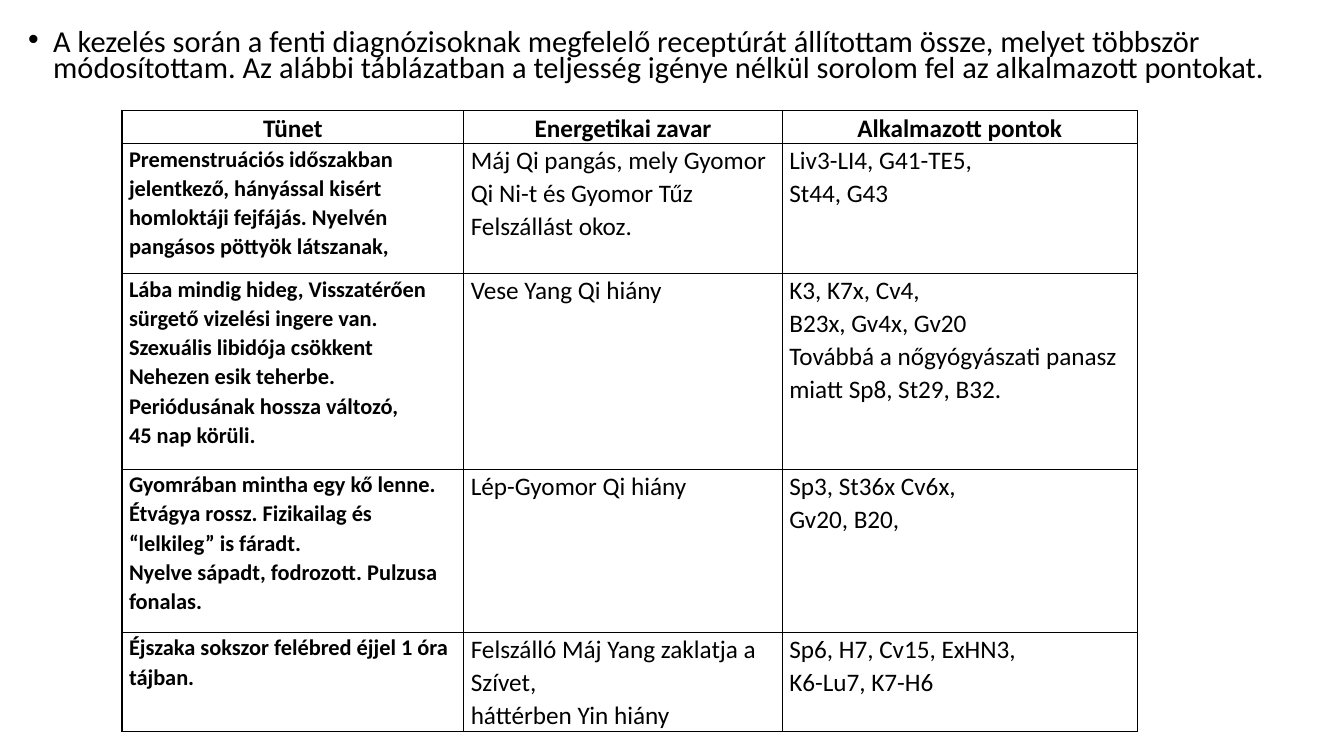
import pptx
import pptx.util
import pptx.dml.color
import pptx.enum.text
import pptx.oxml
import pptx.oxml.ns

Inch = pptx.util.Inches
Pt = pptx.util.Pt
NS = pptx.oxml.ns.nsdecls("a")
INK = "000000"


def color(code):
    return pptx.dml.color.RGBColor.from_string(code)


def style(par, size, bold, space):
    par.line_spacing = space
    for run in par.runs:
        run.font.name = "Calibri"
        run.font.size = Pt(size)
        run.font.bold = bold
        run.font.color.rgb = color(INK)


deck = pptx.Presentation()
deck.slide_width, deck.slide_height = Inch(13.33), Inch(7.5)
slide = deck.slides.add_slide(deck.slide_layouts[6])

# Table of symptoms, disorders and points
rows = [
    ("Tünet", "Energetikai zavar", "Alkalmazott pontok"),
    ("Premenstruációs időszakban jelentkező, hányással kisért homloktáji "
     "fejfájás. Nyelvén pangásos pöttyök látszanak,",
     "Máj Qi pangás, mely Gyomor Qi Ni-t és Gyomor Tűz Felszállást okoz.",
     "Liv3-LI4, G41-TE5,\nSt44, G43"),
    ("Lába mindig hideg, Visszatérően sürgető vizelési ingere van. Szexuális "
     "libidója csökkent Nehezen esik teherbe. Periódusának hossza változó,\n"
     "45 nap körüli.",
     "Vese Yang Qi hiány",
     "K3, K7x, Cv4,\nB23x, Gv4x, Gv20\n"
     "Továbbá a nőgyógyászati panasz miatt Sp8, St29, B32."),
    ("Gyomrában mintha egy kő lenne. Étvágya rossz. Fizikailag és “lelkileg” "
     "is fáradt.\nNyelve sápadt, fodrozott. Pulzusa fonalas.",
     "Lép-Gyomor Qi hiány",
     "Sp3, St36x Cv6x,\nGv20, B20,"),
    ("Éjszaka sokszor felébred éjjel 1 óra tájban.",
     "Felszálló Máj Yang zaklatja a Szívet,\nháttérben Yin hiány",
     "Sp6, H7, Cv15, ExHN3,\nK6-Lu7, K7-H6"),
]
wide = [3.39, 3.16, 3.52]
high = [0.31, 1.29, 1.94, 1.62, 0.96]

frame = slide.shapes.add_table(len(rows), len(wide), Inch(1.21), Inch(1.1),
                               Inch(sum(wide)), Inch(sum(high)))
table = frame.table
table.first_row = table.horz_banding = False
for col, size in zip(table.columns, wide):
    col.width = Inch(size)
for row, size in zip(table.rows, high):
    row.height = Inch(size)

for r, texts in enumerate(rows):
    for c, text in enumerate(texts):
        cell = table.cell(r, c)
        cell.margin_left = cell.margin_right = Inch(0.07)
        cell.margin_top = cell.margin_bottom = 0
        cell.text_frame.text = text
        for par in cell.text_frame.paragraphs:
            style(par, 16 if r and c == 0 else 18, r == 0 or c == 0, 1.07)
            if r == 0:
                par.alignment = pptx.enum.text.PP_ALIGN.CENTER
        # Borders come before the fill in the cell properties
        cell.fill.background()
        props = cell._tc.get_or_add_tcPr()
        for i, side in enumerate(("lnL", "lnR", "lnT", "lnB")):
            props.insert(i, pptx.oxml.parse_xml(
                f'<a:{side} {NS} w="{Pt(1)}"><a:solidFill>'
                f'<a:srgbClr val="{INK}"/></a:solidFill></a:{side}>'))

# Bulleted introduction
box = slide.shapes.add_textbox(Inch(0.18), Inch(0.27), Inch(12.64), Inch(0.66))
box.text_frame.word_wrap = True
box.text_frame.text = (
    "A kezelés során a fenti diagnózisoknak megfelelő receptúrát állítottam "
    "össze, melyet többször módosítottam. Az alábbi táblázatban a teljesség "
    "igénye nélkül sorolom fel az alkalmazott pontokat.")
intro = box.text_frame.paragraphs[0]
style(intro, 21.7, False, 0.7)
intro.space_before = Pt(10)
props = intro._p.get_or_add_pPr()
props.set("marL", str(Inch(0.25)))
props.set("indent", str(-Inch(0.25)))
for tag in ('buFont {} typeface="Arial"', 'buChar {} char="•"'):
    props.append(pptx.oxml.parse_xml(f"<a:{tag.format(NS)}/>"))

deck.save("out.pptx")
